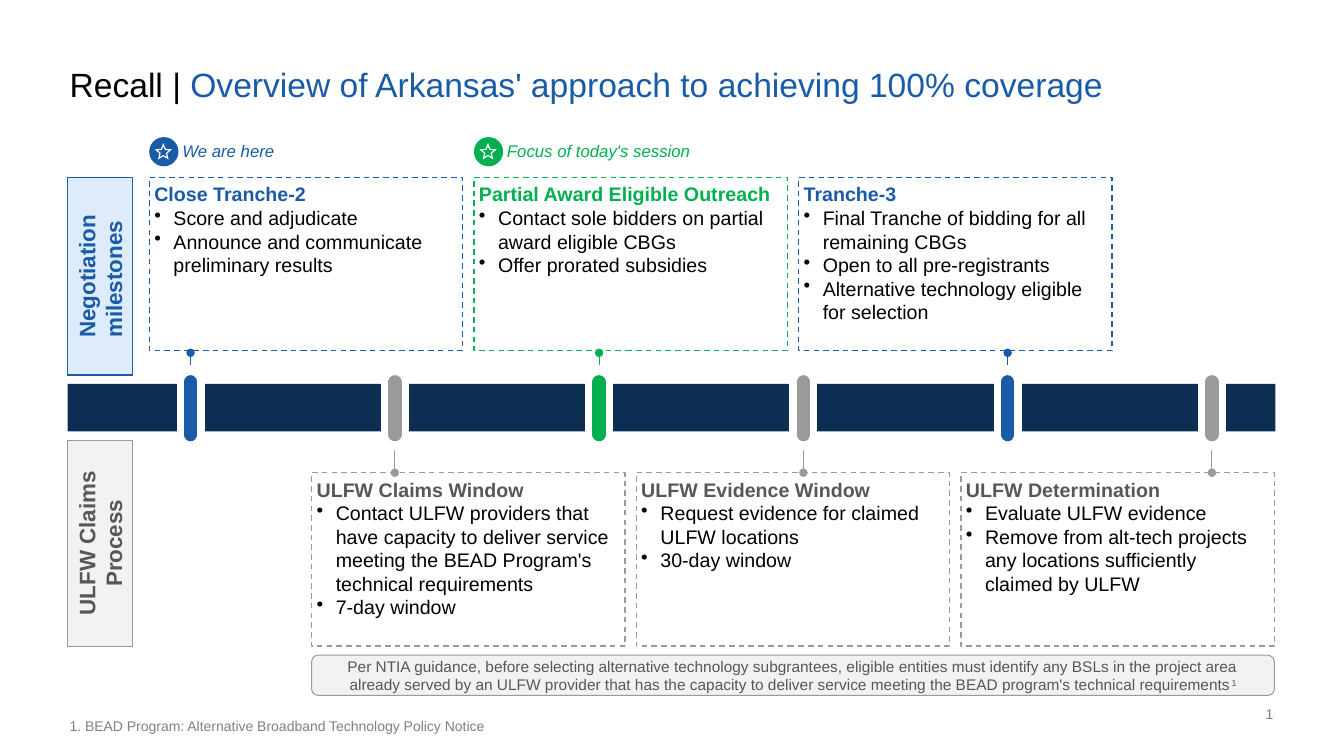
from dataclasses import dataclass
from math import cos, pi, sin

from lxml.etree import SubElement
from pptx import Presentation
from pptx.dml.color import RGBColor
from pptx.enum.dml import MSO_LINE
from pptx.enum.shapes import MSO_CONNECTOR as CONN, MSO_SHAPE as SHAPE
from pptx.enum.text import MSO_ANCHOR as ANCHOR, PP_ALIGN as ALIGN
from pptx.oxml.ns import qn
from pptx.util import Inches, Pt

BLUE = RGBColor(0x1A, 0x5B, 0xA7)
NAVY = RGBColor(0x0D, 0x2E, 0x53)
GREEN = RGBColor(0x00, 0xB0, 0x50)
GRAY = RGBColor(0x9A, 0x9A, 0x9A)
DARK_GRAY = RGBColor(0x57, 0x57, 0x57)
MID_GRAY = RGBColor(0x80, 0x80, 0x80)
PALE_GRAY = RGBColor(0xF2, 0xF2, 0xF2)
PALE_BLUE = RGBColor(0xDE, 0xEB, 0xFA)
BLACK = RGBColor(0x02, 0x01, 0x01)
WHITE = RGBColor(0xFF, 0xFF, 0xFF)

PHASE_W, PHASE_H, PHASE_STEP = 3.11, 1.72, 3.22
TOP_LEFT, TOP_Y = 1.48, 1.76
BOTTOM_LEFT, BOTTOM_Y = 3.09, 4.69
FIRST_STOP, LAST_STOP = 1.89, 12.02


@dataclass
class Phase:
    title: str
    bullets: list[str]
    color: RGBColor
    line: RGBColor


@dataclass
class Label:
    text: str
    box: tuple
    fill: RGBColor
    line: RGBColor
    color: RGBColor


@dataclass
class Marker:
    text: str
    column: int
    width: float
    color: RGBColor


NEGOTIATION = [
    Phase("Close Tranche-2",
          ["Score and adjudicate", "Announce and communicate preliminary results"], BLUE, BLUE),
    Phase("Partial Award Eligible Outreach",
          ["Contact sole bidders on partial award eligible CBGs", "Offer prorated subsidies"],
          GREEN, GREEN),
    Phase("Tranche-3",
          ["Final Tranche of bidding for all remaining CBGs", "Open to all pre-registrants",
           "Alternative technology eligible for selection"], BLUE, BLUE),
]
CLAIMS = [
    Phase("ULFW Claims Window",
          ["Contact ULFW providers that have capacity to deliver service meeting the BEAD "
           "Program's technical requirements", "7-day window"], DARK_GRAY, GRAY),
    Phase("ULFW Evidence Window",
          ["Request evidence for claimed ULFW locations", "30-day window"], DARK_GRAY, GRAY),
    Phase("ULFW Determination",
          ["Evaluate ULFW evidence",
           "Remove from alt-tech projects any locations sufficiently claimed by ULFW"],
          DARK_GRAY, GRAY),
]
LABELS = [
    Label("Negotiation milestones ", (0.01, 2.42, 1.96, 0.64), PALE_BLUE, BLUE, BLUE),
    Label("ULFW Claims Process", (-0.03, 5.07, 2.04, 0.64), PALE_GRAY, GRAY, DARK_GRAY),
]
MARKERS = [
    Marker("We are here", 0, 1.14, BLUE),
    Marker("Focus of today's session", 1, 2.12, GREEN),
]


def add_run(p, text: str, size: float, color: RGBColor, **extra):
    r = p.add_run()
    r.text = text
    for name, value in {"name": "Arial", "size": Pt(size), **extra}.items():
        setattr(r.font, name, value)
    r.font.color.rgb = color
    return r


def set_frame(tf, anchor=ANCHOR.TOP, inset_x: float = 0, inset_y: float = 0) -> None:
    frame = {"word_wrap": True, "vertical_anchor": anchor,
             "margin_left": Inches(inset_x), "margin_right": Inches(inset_x),
             "margin_top": Inches(inset_y), "margin_bottom": Inches(inset_y)}
    for name, value in frame.items():
        setattr(tf, name, value)


def add_box(s, kind, box: tuple, fill=None, line=None, width: float = 0.75):
    sp = s.shapes.add_shape(kind, *map(Inches, box))
    sp.shadow.inherit = False
    for part, color in ((sp.fill, fill), (sp.line.fill, line)):
        if color is None:
            part.background()
        else:
            part.solid()
            part.fore_color.rgb = color
    if line is not None:
        sp.line.width = Pt(width)
    return sp


def add_text(s, box: tuple, anchor=ANCHOR.TOP, inset_x: float = 0, inset_y: float = 0):
    tf = s.shapes.add_textbox(*map(Inches, box)).text_frame
    set_frame(tf, anchor, inset_x, inset_y)
    return tf.paragraphs[0]


def add_line(s, x: float, y1: float, y2: float, color: RGBColor, width: float,
             dot: bool = False) -> None:
    c = s.shapes.add_connector(CONN.STRAIGHT, Inches(x), Inches(y1), Inches(x), Inches(y2))
    c.line.color.rgb = color
    c.line.width = Pt(width)
    ln = c.line._get_or_add_ln()
    if dot:
        SubElement(ln, qn("a:headEnd"), type="oval")
    else:
        ln.set("cap", "rnd")
    SubElement(c._element.spPr, qn("a:effectLst"))


def add_phase(s, phase: Phase, left: float, top: float) -> None:
    sp = add_box(s, SHAPE.RECTANGLE, (left, top, PHASE_W, PHASE_H), line=phase.line, width=1)
    sp.line.dash_style = MSO_LINE.DASH
    tf = sp.text_frame
    set_frame(tf, inset_x=0.05, inset_y=0.05)
    p = tf.paragraphs[0]
    p.alignment = ALIGN.LEFT
    add_run(p, phase.title, 14, phase.color, bold=True)
    for text in phase.bullets:
        p = tf.add_paragraph()
        p.alignment = ALIGN.LEFT
        pPr = p._p.get_or_add_pPr()
        pPr.set("marL", str(Inches(0.19)))
        pPr.set("indent", str(-Inches(0.19)))
        SubElement(pPr, qn("a:buChar"), char="•")
        add_run(p, text, 14, BLACK)


def star_points(x: float, y: float, radius: float) -> list[tuple]:
    radii = [radius, radius * 0.45] * 5
    return [(Inches(x + r * sin(i * pi / 5)), Inches(y - r * cos(i * pi / 5)))
            for i, r in enumerate(radii)]


def add_marker(s, marker: Marker) -> None:
    left = TOP_LEFT + marker.column * PHASE_STEP
    add_box(s, SHAPE.OVAL, (left, 1.36, 0.29, 0.29), fill=marker.color)
    # Outlined star: outer contour with a smaller star cut out
    outer, inner = (star_points(left + 0.14, 1.51, r) for r in (0.09, 0.06))
    builder = s.shapes.build_freeform(*outer[0])
    builder.add_line_segments(outer[1:])
    builder.move_to(*inner[0])
    builder.add_line_segments(inner[1:])
    star = builder.convert_to_shape()
    star.shadow.inherit = False
    star.fill.solid()
    star.fill.fore_color.rgb = WHITE
    star.line.fill.background()
    p = add_text(s, (left + 0.23, 1.39, marker.width, 0.22), ANCHOR.MIDDLE, 0.1, 0.05)
    add_run(p, marker.text, 12, marker.color, italic=True)


def main() -> None:
    prs = Presentation()
    prs.slide_width, prs.slide_height = Inches(13.33), Inches(7.5)
    s = prs.slides.add_slide(prs.slide_layouts[6])

    # Title
    p = add_text(s, (0.69, 0.68, 11.96, 0.36))
    p.line_spacing = 0.9
    add_run(p, "Recall | ", 24, BLACK)
    add_run(p, "Overview of Arkansas' approach to achieving 100% coverage", 24, BLUE)

    # Timeline bar with stops alternating between the two rows
    add_box(s, SHAPE.RECTANGLE, (0.67, 3.81, 11.98, 0.47), fill=NAVY)
    stops = [phase for pair in zip(NEGOTIATION, CLAIMS) for phase in pair]
    for i, phase in enumerate(stops):
        x = FIRST_STOP + i * (LAST_STOP - FIRST_STOP) / (len(stops) - 1)
        start, end = (BOTTOM_Y, 4.13) if i % 2 else (3.5, 3.97)
        add_line(s, x, start, end, phase.line, 0.75, dot=True)
        add_line(s, x, 4.33, 3.76, WHITE, 20)
        add_line(s, x, 4.31, 3.79, phase.line, 9.75)

    # Phase boxes
    for phases, left, top in ((NEGOTIATION, TOP_LEFT, TOP_Y), (CLAIMS, BOTTOM_LEFT, BOTTOM_Y)):
        for i, phase in enumerate(phases):
            add_phase(s, phase, left + i * PHASE_STEP, top)

    # Row labels and markers
    for label in LABELS:
        sp = add_box(s, SHAPE.RECTANGLE, label.box, label.fill, label.line)
        sp.rotation = 270
        set_frame(sp.text_frame, ANCHOR.MIDDLE)
        p = sp.text_frame.paragraphs[0]
        p.alignment = ALIGN.CENTER
        add_run(p, label.text, 16, label.color, bold=True)
    for marker in MARKERS:
        add_marker(s, marker)

    # Guidance note
    sp = add_box(s, SHAPE.ROUNDED_RECTANGLE, (BOTTOM_LEFT, 6.5, 9.55, 0.4), PALE_GRAY, GRAY)
    set_frame(sp.text_frame, ANCHOR.MIDDLE, 0.1, 0.05)
    p = sp.text_frame.paragraphs[0]
    p.alignment = ALIGN.CENTER
    add_run(p, "Per NTIA guidance, before selecting alternative technology subgrantees, eligible "
            "entities must identify any BSLs in the project area already served by an ULFW "
            "provider that has the capacity to deliver service meeting the BEAD program's "
            "technical requirements", 11, DARK_GRAY)
    add_run(p, "1", 11, DARK_GRAY)._r.get_or_add_rPr().set("baseline", "30000")

    # Footnote and page number
    p = add_text(s, (0.69, 7.14, 9.88, 0.15), ANCHOR.BOTTOM)
    p.line_spacing = 0.9
    add_run(p, "1. BEAD Program: Alternative Broadband Technology Policy Notice", 10, MID_GRAY)
    p = add_text(s, (12.21, 7, 0.42, 0.17), ANCHOR.BOTTOM)
    p.alignment = ALIGN.RIGHT
    add_run(p, "1", 10, MID_GRAY)

    prs.save("out.pptx")


if __name__ == "__main__":
    main()
